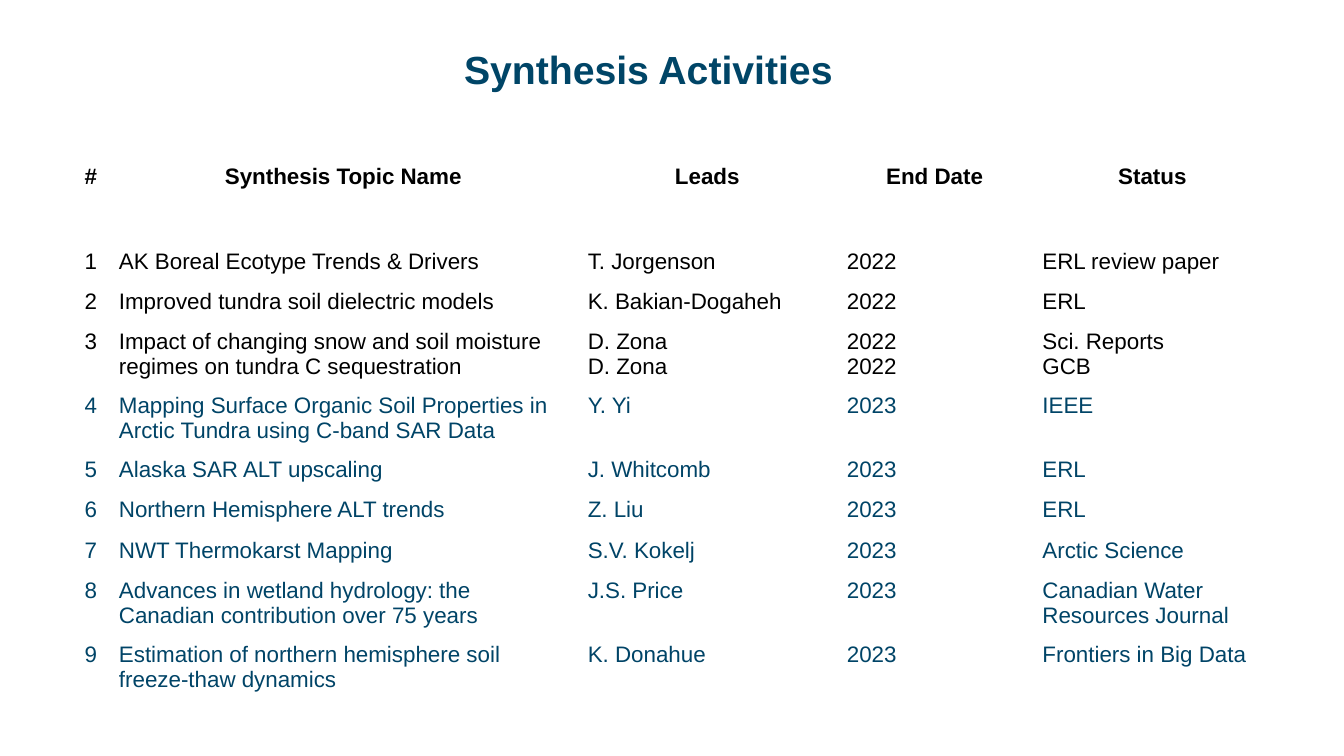
import pptx
import pptx.dml.color
import pptx.enum.text
import pptx.util

RGBColor = pptx.dml.color.RGBColor
Inches = pptx.util.Inches
CENTER = pptx.enum.text.PP_ALIGN.CENTER
LEFT = pptx.enum.text.PP_ALIGN.LEFT

TITLE_BLUE = RGBColor(0x00, 0x45, 0x67)
ROW_BLUE = RGBColor(0x00, 0x44, 0x67)
BLACK = RGBColor(0x00, 0x00, 0x00)

COLUMN_WIDTHS = [0.36, 4.65, 2.57, 1.94, 2.38]
HEADER_HEIGHT = 0.43
SPACER_HEIGHT = 0.41
ROW_HEIGHT = 0.4
TWO_LINE_HEIGHT = 0.6
HEADERS = ["#", "Synthesis Topic Name", "Leads", "End Date", "Status"]
PUBLISHED_2022 = [
    ("AK Boreal Ecotype Trends & Drivers", "T. Jorgenson", "2022", "ERL review paper"),
    ("Improved tundra soil dielectric models", "K. Bakian-Dogaheh", "2022", "ERL"),
    ("Impact of changing snow and soil moisture regimes on tundra C sequestration",
     "D. Zona\nD. Zona", "2022\n2022", "Sci. Reports\nGCB"),
]
PUBLISHED_2023 = [
    ("Mapping Surface Organic Soil Properties in Arctic Tundra using C-band SAR Data",
     "Y. Yi", "2023", "IEEE"),
    ("Alaska SAR ALT upscaling", "J. Whitcomb", "2023", "ERL"),
    ("Northern Hemisphere ALT trends", "Z. Liu", "2023", "ERL"),
    ("NWT Thermokarst Mapping", "S.V. Kokelj", "2023", "Arctic Science"),
    ("Advances in wetland hydrology: the Canadian contribution over 75 years",
     "J.S. Price", "2023", "Canadian Water Resources Journal"),
    ("Estimation of northern hemisphere soil freeze-thaw dynamics",
     "K. Donahue", "2023", "Frontiers in Big Data"),
]


class SlideBuilder:
    font_name = "Arial"
    title_size = 28
    table_size = 16

    def __init__(self, slide):
        self.slide = slide

    def fill_text(self, text_frame, text, size, color, bold, alignment):
        text_frame.text = text
        for paragraph in text_frame.paragraphs:
            paragraph.alignment = alignment
            paragraph.font.name = self.font_name
            paragraph.font.size = pptx.util.Pt(size)
            paragraph.font.bold = bold
            paragraph.font.color.rgb = color

    def title(self, text, left, top, width, height):
        shape = self.slide.shapes.add_textbox(
            Inches(left), Inches(top), Inches(width), Inches(height))
        text_frame = shape.text_frame
        text_frame.word_wrap = True
        text_frame.vertical_anchor = pptx.enum.text.MSO_ANCHOR.MIDDLE
        self.fill_text(text_frame, text, self.title_size, TITLE_BLUE, True, CENTER)

    def table(self, left, top, widths, heights):
        shape = self.slide.shapes.add_table(
            len(heights), len(widths), Inches(left), Inches(top),
            Inches(sum(widths)), Inches(sum(heights)))
        table = shape.table
        table.first_row = False
        table.horz_banding = False
        for column, width in zip(table.columns, widths):
            column.width = Inches(width)
        for row, height in zip(table.rows, heights):
            row.height = Inches(height)
        for cell in table.iter_cells():
            cell.fill.background()
        return table

    def header_row(self, row, texts):
        for cell, text in zip(row.cells, texts):
            self.fill_text(cell.text_frame, text, self.table_size, BLACK, True, CENTER)

    def activity_row(self, row, number, activity, color):
        for index, (cell, text) in enumerate(zip(row.cells, (str(number), *activity))):
            alignment = CENTER if index == 0 else LEFT
            self.fill_text(cell.text_frame, text, self.table_size, color, False, alignment)


def activity_height(activity):
    return TWO_LINE_HEIGHT if len(activity[0]) > 45 else ROW_HEIGHT


def main():
    presentation = pptx.Presentation()
    presentation.slide_width = Inches(13.33)
    presentation.slide_height = Inches(7.5)
    builder = SlideBuilder(presentation.slides.add_slide(presentation.slide_layouts[6]))

    builder.title("Synthesis Activities", 1.93, 0.33, 9, 0.7)

    activities = PUBLISHED_2022 + PUBLISHED_2023
    heights = [HEADER_HEIGHT, SPACER_HEIGHT, *map(activity_height, activities)]
    table = builder.table(0.72, 1.58, COLUMN_WIDTHS, heights)
    builder.header_row(table.rows[0], HEADERS)
    for number, activity in enumerate(activities, start=1):
        color = BLACK if number <= len(PUBLISHED_2022) else ROW_BLUE
        builder.activity_row(table.rows[number + 1], number, activity, color)

    presentation.save("out.pptx")


if __name__ == "__main__":
    main()
